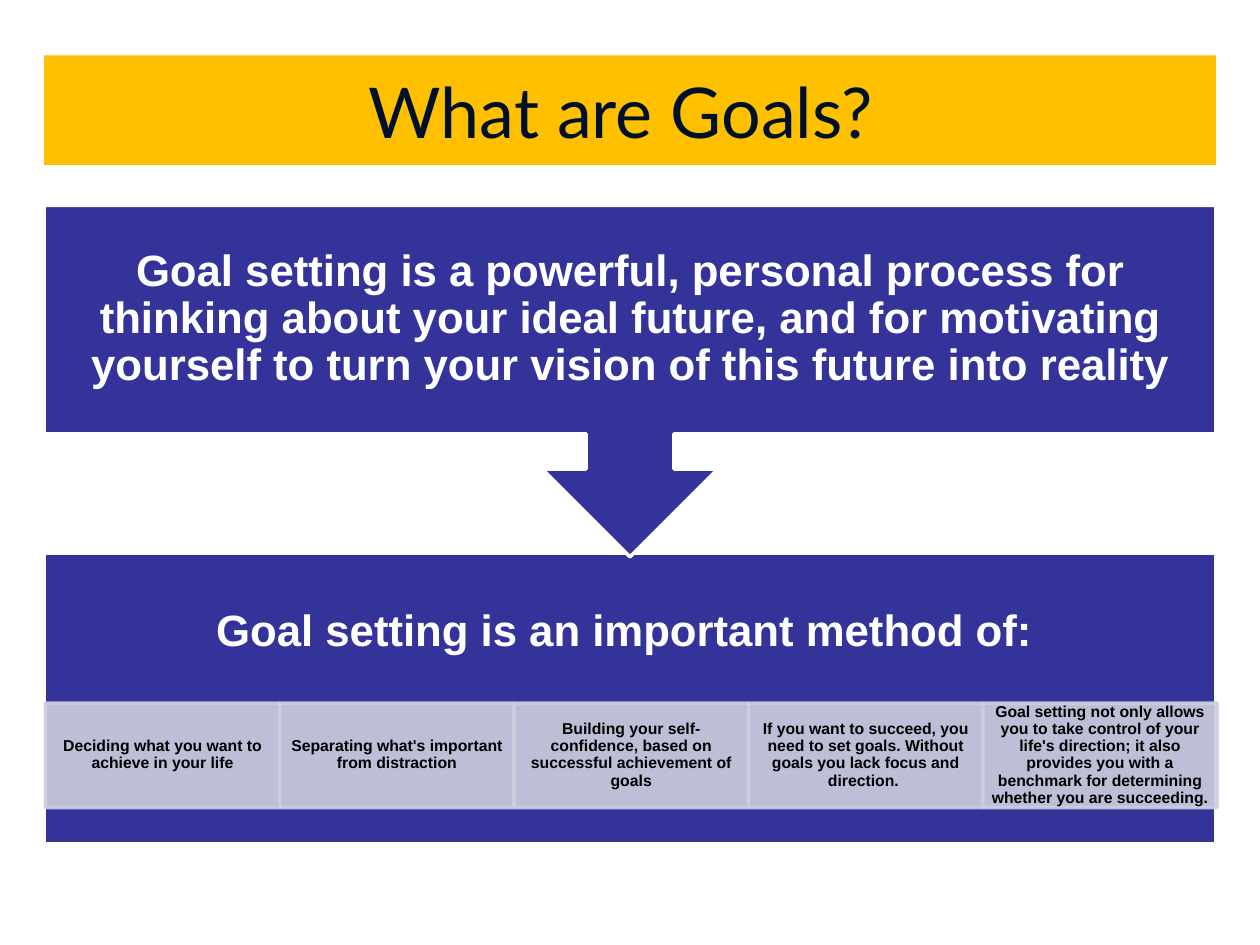
from lxml import etree
from pptx import Presentation, util as u
from pptx.dml.color import RGBColor
from pptx.enum import shapes, text
from pptx.oxml.ns import qn

COLORS = {"gold": "FFC000", "ink": "001027", "navy": "333399",
          "pale": "CECEDE", "white": "FFFFFF", "black": "000000"}
REASONS = [
    "Deciding what you want to achieve in your life",
    "Separating what's important from distraction",
    "Building your self-confidence, based on successful achievement of goals",
    "If you want to succeed, you need to set goals. Without goals you lack focus and direction. ",
    "Goal setting not only allows you to take control of your life's direction; it also "
    "provides you with a benchmark for determining whether you are succeeding.",
]
LEFT, WIDTH = 0.35, 9.3
COL = 1.86

prs = Presentation()
prs.slide_width, prs.slide_height = u.Inches(10), u.Inches(7.5)
s = prs.slides.add_slide(prs.slide_layouts[6])


def add_block(kind, box, fill, line=None, alpha=None):
    sp = s.shapes.add_shape(kind, *[u.Inches(v) for v in box])
    sp.shadow.inherit = False
    sp.fill.solid()
    sp.fill.fore_color.rgb = RGBColor.from_string(COLORS[fill])
    if line:
        sp.line.color.rgb = RGBColor.from_string(COLORS[line])
        sp.line.width = u.Pt(2)
    else:
        sp.line.fill.background()
    if alpha:
        for clr in sp._element.spPr.iter(qn("a:srgbClr")):
            etree.SubElement(clr, qn("a:alpha")).set("val", str(alpha * 1000))
    return sp


def write(sp, words, size, color, font="Arial", bold=True, spacing=0.9, inset=(0.19, 0.19)):
    tf = sp.text_frame
    tf.word_wrap = True
    tf.vertical_anchor = text.MSO_ANCHOR.MIDDLE
    tf.margin_left = tf.margin_right = u.Inches(inset[0])
    tf.margin_top = tf.margin_bottom = u.Inches(inset[1])
    p = tf.paragraphs[0]
    p.text = words
    p.alignment = text.PP_ALIGN.CENTER
    p.line_spacing = spacing
    r = p.runs[0]
    r.font.name, r.font.size, r.font.bold = font, u.Pt(size), bold
    r.font.color.rgb = RGBColor.from_string(COLORS[color])


RECT = shapes.MSO_SHAPE.RECTANGLE

title = add_block(RECT, (LEFT, 0.44, WIDTH, 0.87), "gold")
write(title, "What are Goals? ", 40, "ink", "Lato", False, 1.0, (0.1, 0.05))

add_block(RECT, (LEFT, 4.39, WIDTH, 2.31), "navy", "white")

for i, reason in enumerate(REASONS):
    cell = add_block(RECT, (LEFT + 0.01 + i * COL, 5.58, COL, 0.83), "pale", "pale", 90)
    write(cell, reason, 9, "black", inset=(0.07, 0.01))

callout = add_block(shapes.MSO_SHAPE.UP_ARROW_CALLOUT, (LEFT, 1.63, WIDTH, 2.79), "navy", "white")
callout.rotation = 180

for top, height, words in [
    (1.63, 1.81, "Goal setting is a powerful, personal process for thinking about your ideal future, "
                 "and for motivating yourself to turn your vision of this future into reality"),
    (4.39, 1.25, "Goal setting is an important method of: "),
]:
    heading = s.shapes.add_textbox(*[u.Inches(v) for v in (LEFT, top, WIDTH, height)])
    write(heading, words, 25, "white")

prs.save("out.pptx")
